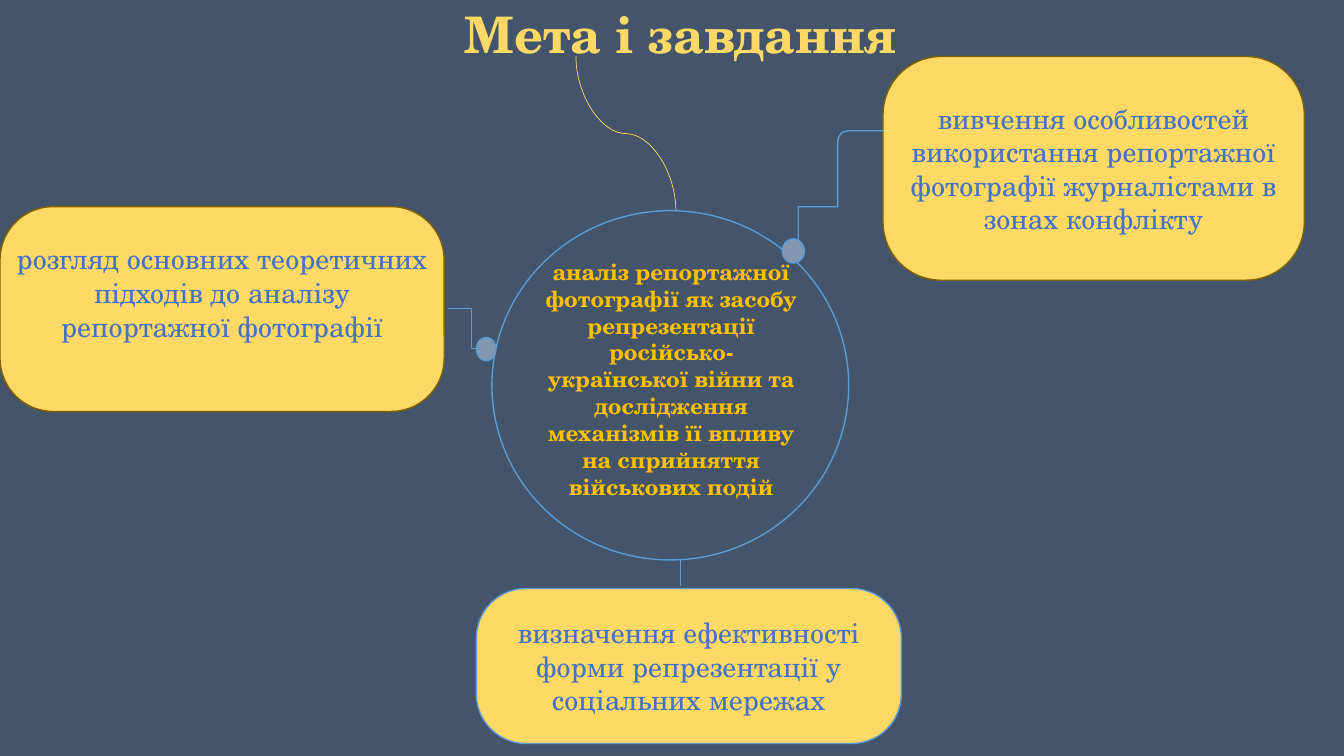
"""Build a slide that links a central aim to three tasks."""
from dataclasses import dataclass

from lxml import etree
from pptx import Presentation, util as u
from pptx.dml.color import RGBColor
from pptx.enum import shapes, text
from pptx.oxml import ns

HUES = {
    "back": "44546A", "gold": "FFD966", "rim": "806000", "blue": "5B9BD5",
    "ink": "4472C4", "amber": "FFC000", "dot": "8497B0",
}
FONT = "TeX Gyre Schola"
WIDE, HIGH = u.Inches(13.333), u.Inches(7.5)


@dataclass
class Area:
    """Hold a place as percentages of the slide's width and height."""
    left: float
    top: float
    width: float
    height: float


@dataclass
class Task:
    """Hold one task box."""
    words: str
    area: Area
    rim: str
    bend: float
    foot: float = 0


TASKS = [
    Task("вивчення особливостей використання репортажної фотографії "
         "журналістами в зонах конфлікту",
         Area(65.7, 7.47, 31.35, 29.6), "rim", 0.26),
    Task("визначення ефективності форми репрезентації у соціальних мережах",
         Area(35.45, 77.85, 31.62, 20.5), "blue", 0.32),
    Task("розгляд основних теоретичних підходів до аналізу "
         "репортажної фотографії",
         Area(0, 27.33, 33.05, 27.1), "rim", 0.26, 0.33),
]
AIM = ("аналіз репортажної фотографії як засобу репрезентації "
       "російсько-української війни та дослідження механізмів її впливу "
       "на сприйняття військових подій")
RING = Area(36.6, 27.87, 26.55, 46.2)
DOTS = [Area(35.45, 44.65, 1.45, 3.07), Area(58.2, 31.6, 1.65, 3.2)]
ROUTE = [(65.7, 17.3), (63.08, 17.3), (62.7, 17.5), (62.48, 17.9),
         (62.33, 18.67), (62.33, 27.35), (59.4, 27.35), (59.4, 32.1)]


def hue(name: str) -> RGBColor:
    """Return a named colour."""
    return RGBColor.from_string(HUES[name])


def spot(x: float, y: float) -> tuple[int, int]:
    """Turn shares of the slide into lengths."""
    return int(WIDE * x / 100), int(HIGH * y / 100)


def frame(area: Area) -> tuple[int, int, int, int]:
    """Turn an area into left, top, width and height."""
    return spot(area.left, area.top) + spot(area.width, area.height)


def write(shape, words: str, *, size: float, color: str, bold: bool = False,
          anchor=text.MSO_ANCHOR.MIDDLE, space: float = 1) -> None:
    """Put centred, formatted text in a shape."""
    body = shape.text_frame
    body.word_wrap = True
    body.auto_size = text.MSO_AUTO_SIZE.NONE
    body.vertical_anchor = anchor
    para = body.paragraphs[0]
    para.alignment = text.PP_ALIGN.CENTER
    para.line_spacing = space
    run = para.add_run()
    run.text = words
    run.font.name, run.font.size, run.font.bold = FONT, u.Pt(size), bold
    run.font.color.rgb = hue(color)


def paint(shape, fill: str | None, line: str) -> None:
    """Set a shape's fill and outline and drop its shadow."""
    shape.shadow.inherit = False
    if fill:
        shape.fill.solid()
        shape.fill.fore_color.rgb = hue(fill)
    else:
        shape.fill.background()
    shape.line.color.rgb = hue(line)
    shape.line.width = u.Pt(1)


def block(slide, kind, area: Area, fill: str | None, line: str):
    """Add a painted preset shape."""
    shape = slide.shapes.add_shape(kind, *frame(area))
    paint(shape, fill, line)
    return shape


def box(slide, task: Task) -> None:
    """Add one rounded task box."""
    shape = block(slide, shapes.MSO_SHAPE.ROUNDED_RECTANGLE, task.area,
                  "gold", task.rim)
    shape.adjustments[0] = task.bend
    body = shape.text_frame
    body.margin_left = body.margin_right = 0
    body.margin_bottom = u.Inches(0.05 + task.foot)
    write(shape, task.words, size=20, color="ink")


def link(slide, kind, start: tuple, end: tuple, color: str = "blue",
         width: float = 1, turn: int = 0) -> None:
    """Add a connector, turned clockwise by whole degrees."""
    line = slide.shapes.add_connector(kind, *spot(*start), *spot(*end))
    line.line.color.rgb = hue(color)
    line.line.width = u.Pt(width)
    props = line._element.spPr
    etree.SubElement(props, ns.qn("a:effectLst"))
    if turn:
        props.find(ns.qn("a:xfrm")).set("rot", str(turn * 60000))


def main() -> None:
    """Draw the slide and save it."""
    deck = Presentation()
    deck.slide_width, deck.slide_height = WIDE, HIGH
    slide = deck.slides.add_slide(deck.slide_layouts[5])
    slide.background.fill.solid()
    slide.background.fill.fore_color.rgb = hue("back")

    for task in TASKS:
        box(slide, task)

    title = slide.shapes.title
    title.left, title.top, title.width, title.height = frame(
        Area(33.3, 0.4, 34.73, 9.07))
    write(title, "Мета і завдання", size=36, color="gold", bold=True, space=0.9)

    pen = slide.shapes.build_freeform(*spot(*ROUTE[0]))
    pen.add_line_segments([spot(*point) for point in ROUTE[1:]], close=False)
    paint(pen.convert_to_shape(), None, "blue")

    kinds = shapes.MSO_CONNECTOR
    link(slide, kinds.ELBOW, (33.3, 40.8), (36.9, 46.1))
    link(slide, kinds.STRAIGHT, (50.62, 74), (50.62, 77.5))

    block(slide, shapes.MSO_SHAPE.OVAL, RING, None, "blue")
    aim = slide.shapes.add_textbox(*frame(Area(39.45, 33.47, 21, 33.6)))
    write(aim, AIM, size=16, color="amber", bold=True,
          anchor=text.MSO_ANCHOR.TOP)
    for dot in DOTS:
        block(slide, shapes.MSO_SHAPE.OVAL, dot, "dot", "blue")
    link(slide, kinds.CURVE, (52.35, 11.07), (40.8, 24.3), "gold", 0.5, 270)

    deck.save("out.pptx")


if __name__ == "__main__":
    main()
